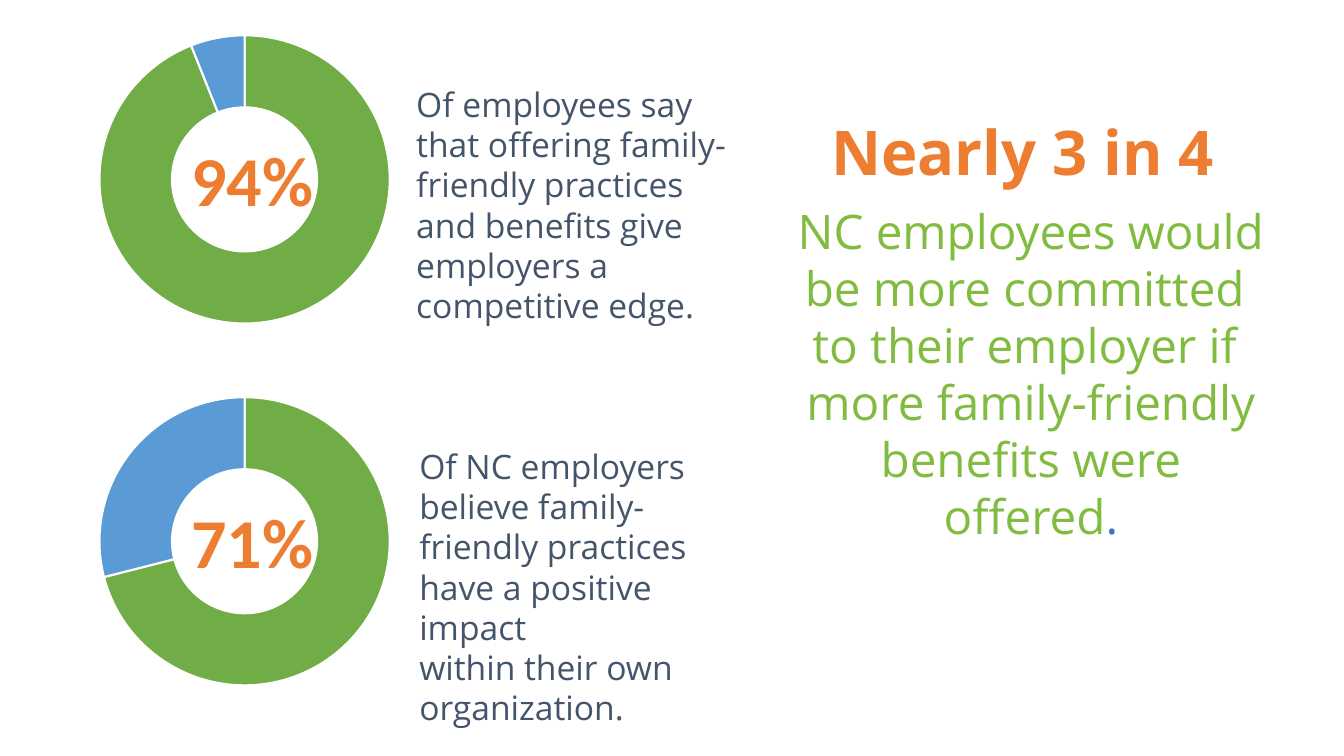
from lxml import etree
from pptx import Presentation
from pptx.chart.data import CategoryChartData
from pptx.dml.color import RGBColor
from pptx.enum.chart import XL_CHART_TYPE
from pptx.enum.text import MSO_ANCHOR, MSO_AUTO_SIZE, PP_ALIGN
from pptx.oxml import parse_xml
from pptx.oxml.ns import nsdecls, qn
from pptx.util import Inches, Pt

DOUGHNUT = XL_CHART_TYPE.DOUGHNUT
TOP = MSO_ANCHOR.TOP
FIXED, GROW = MSO_AUTO_SIZE.NONE, MSO_AUTO_SIZE.SHAPE_TO_FIT_TEXT
CENTER, LEFT = PP_ALIGN.CENTER, PP_ALIGN.LEFT
WIDTH, HEIGHT = 13.33, 7.5
COLORS = {"orange": "ED7D31", "lime": "81BC41", "blue": "4472C4", "slate": "44546A",
          "white": "FFFFFF", "black": "000000"}
SLICES = ["70AD47", "5B9BD5", "FFC000", "43682B"]
STYLES = {
    "headline": {"size": Pt(44), "name": "Open Sans", "bold": True},
    "statement": {"size": Pt(34), "name": "Open Sans", "bold": False},
    "percent": {"size": Pt(50), "name": "Calibri", "bold": True},
    "caption": {"size": Pt(24), "name": "Open Sans", "bold": False},
    "chart": {"size": Pt(10), "name": "Calibri"},
}


class SurveyPage:
    """Draws the survey findings on one slide in a shared style."""

    def __init__(self, deck):
        self.page = deck.slides.add_slide(deck.slide_layouts[1])
        title = self.page.shapes.title
        title.element.getparent().remove(title.element)

    def format_font(self, font, style, color):
        for name, value in STYLES[style].items():
            setattr(font, name, value)
        font.color.rgb = RGBColor.from_string(COLORS[color])

    def fill_paragraph(self, para, spans, align, before=0):
        para.alignment = align
        para.space_before = Pt(before)
        for text, style, color in spans:
            for index, line in enumerate(text.split("\n")):
                if index:
                    para.add_line_break()
                span = para.add_run()
                span.text = line
                self.format_font(span.font, style, color)

    def add_statement(self, place, paragraphs):
        body = self.page.placeholders[1]
        body.left, body.top, body.width, body.height = map(Inches, place)
        frame = body.text_frame
        frame.auto_size, frame.vertical_anchor = FIXED, TOP
        for index, spans in enumerate(paragraphs):
            para = frame.add_paragraph() if index else frame.paragraphs[0]
            properties = para._p.get_or_add_pPr()
            properties.set("marL", "0")
            properties.set("indent", "0")
            etree.SubElement(properties, qn("a:buNone"))
            self.fill_paragraph(para, spans, CENTER, 10 if index else 0)

    def add_text(self, place, text, style, color):
        box = self.page.shapes.add_textbox(*map(Inches, place))
        frame = box.text_frame
        frame.word_wrap, frame.auto_size = True, GROW
        self.fill_paragraph(frame.paragraphs[0], [(text, style, color)], LEFT)

    def add_doughnut(self, place, share):
        data = CategoryChartData()
        data.categories = ["1", "2", "3", "4"]
        data.add_series("Series 1", (share, 100 - share, 0, 0))
        chart = self.page.shapes.add_chart(DOUGHNUT, *map(Inches, place), data).chart
        chart.has_legend = chart.has_title = False
        self.format_font(chart.font, "chart", "black")
        plot = chart.plots[0]
        plot.vary_by_categories = True
        for index, color in enumerate(SLICES):
            point = plot.series[0].points[index].format
            point.fill.solid()
            point.fill.fore_color.rgb = RGBColor.from_string(color)
            point.line.color.rgb = RGBColor.from_string(COLORS["white"])
            point.line.width = Pt(1.5)
        area = chart._chartSpace.chart.plotArea
        area.find(".//" + qn("c:holeSize")).set("val", "75")
        for old in area.findall(qn("c:layout")):
            area.remove(old)
        area.insert(0, parse_xml(
            f'<c:layout {nsdecls("c")}><c:manualLayout><c:layoutTarget val="inner"/>'
            '<c:xMode val="edge"/><c:yMode val="edge"/><c:x val="0"/><c:y val="0"/>'
            '<c:w val="0.94"/><c:h val="1"/></c:manualLayout></c:layout>'))

    def add_finding(self, top, share, caption, caption_left):
        self.add_doughnut((0.07 * WIDTH - 0.02, top, 3.22, 2.88), share)
        self.add_text((1.8, top + 0.97, 1.74, 0.94), f"{share}%", "percent", "orange")
        self.add_text((caption_left, top + 0.44, 3.49, 2.58), caption, "caption", "slate")


def main():
    deck = Presentation()
    deck.slide_width, deck.slide_height = Inches(WIDTH), Inches(HEIGHT)
    survey = SurveyPage(deck)
    survey.add_statement((7.74, 1.08, 4.97, 4.58), [
        [("Nearly 3 in 4 ", "headline", "orange")],
        [("NC employees would be more committed \nto their employer if \n"
          "more family-friendly benefits were offered", "statement", "lime"),
         (".", "statement", "blue")],
    ])
    survey.add_finding(0.34, 94, "Of employees say \nthat offering family-friendly practices \n"
                       "and benefits give employers a competitive edge.", 4.03)
    survey.add_finding(3.93, 71, "Of NC employers believe family-friendly practices "
                       "have a positive impact \nwithin their own organization.", 4.06)
    deck.save("out.pptx")


if __name__ == "__main__":
    main()
